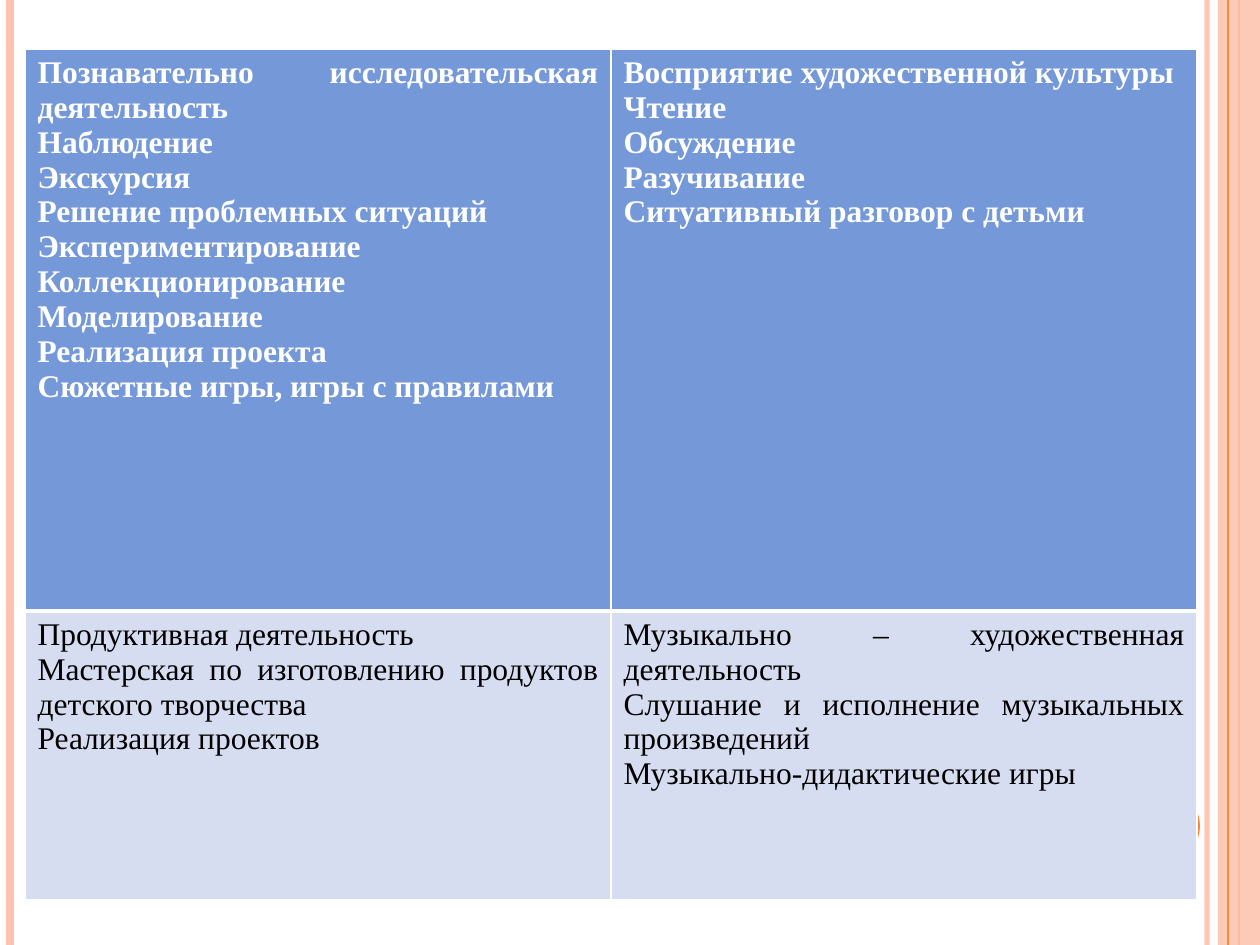
"""Build a slide with a table of children's activities between decorative stripes."""
from dataclasses import dataclass

import pptx
import pptx.dml.color
import pptx.enum.shapes
import pptx.enum.text
import pptx.oxml.ns
import pptx.util
from lxml import etree

PX = 914400 // 126
SLIDE_WIDTH, SLIDE_HEIGHT = 1260, 945
FONT = "Times New Roman"
COLORS = {
    "peach": "FEC3AE",
    "orange": "FE8637",
    "header": "7598D9",
    "body": "D6DDF1",
    "white": "FFFFFF",
    "black": "000000",
}


@dataclass(frozen=True)
class Stripe:
    x: int
    color: str
    weight: float
    opacity: int = 100


@dataclass(frozen=True)
class Block:
    kind: pptx.enum.shapes.MSO_SHAPE
    x: int
    y: int
    width: int
    height: int
    color: str
    opacity: int = 100


@dataclass(frozen=True)
class ActivityRow:
    height: int
    fill: str
    ink: str
    bold: bool
    top: int
    bottom: int
    activities: tuple[tuple[str, ...], ...]


DECOR = (
    Stripe(1207, "peach", 3, 93),
    Stripe(10, "peach", 4.5),
    Stripe(1239, "orange", 1.5),
    Block(pptx.enum.shapes.MSO_SHAPE.RECTANGLE, 1218, 0, 42, SLIDE_HEIGHT, "peach", 87),
    Stripe(1228, "orange", 0.75),
    Block(pptx.enum.shapes.MSO_SHAPE.OVAL, 1124, 788, 76, 76, "orange"),
)

ROWS = (
    ActivityRow(562, "header", "white", True, 1, 3, (
        (
            "Познавательно исследовательская деятельность",
            "Наблюдение",
            "Экскурсия",
            "Решение проблемных ситуаций",
            "Экспериментирование",
            "Коллекционирование",
            "Моделирование",
            "Реализация проекта",
            "Сюжетные игры, игры с правилами",
        ),
        (
            "Восприятие художественной культуры",
            "Чтение",
            "Обсуждение",
            "Разучивание",
            "Ситуативный разговор с детьми",
        ),
    )),
    ActivityRow(289, "body", "black", False, 3, 1, (
        (
            "Продуктивная деятельность",
            "Мастерская по изготовлению продуктов детского творчества",
            "Реализация проектов",
        ),
        (
            "Музыкально – художественная деятельность",
            "Слушание и исполнение музыкальных произведений",
            "Музыкально-дидактические игры",
        ),
    )),
)


def px(length: int) -> pptx.util.Emu:
    """Turn px into EMU."""
    return pptx.util.Emu(length * PX)


def rgb(name: str) -> pptx.dml.color.RGBColor:
    """Look up a named colour."""
    return pptx.dml.color.RGBColor.from_string(COLORS[name])


def add_element(parent, tag: str, **attributes: str):
    """Append a drawing element to its parent."""
    return etree.SubElement(parent, pptx.oxml.ns.qn(tag), attributes)


def set_opacity(properties, opacity: int) -> None:
    """Make the colour in the shape properties translucent."""
    if opacity < 100:
        color = next(properties.iter(pptx.oxml.ns.qn("a:srgbClr")))
        add_element(color, "a:alpha", val=str(opacity * 1000))


def draw_stripe(slide, stripe: Stripe) -> None:
    """Draw a full-height vertical line."""
    line = slide.shapes.add_connector(
        pptx.enum.shapes.MSO_CONNECTOR.STRAIGHT,
        px(stripe.x), px(0), px(stripe.x), px(SLIDE_HEIGHT),
    )
    line.line.color.rgb = rgb(stripe.color)
    line.line.width = pptx.util.Pt(stripe.weight)
    properties = line._element.spPr
    set_opacity(properties, stripe.opacity)
    add_element(properties, "a:effectLst")


def draw_block(slide, block: Block) -> None:
    """Draw a filled shape without an outline."""
    shape = slide.shapes.add_shape(
        block.kind, px(block.x), px(block.y), px(block.width), px(block.height)
    )
    shape.shadow.inherit = False
    shape.fill.solid()
    shape.fill.fore_color.rgb = rgb(block.color)
    shape.line.fill.background()
    set_opacity(shape._element.spPr, block.opacity)


def draw_cell(cell, row: ActivityRow, activities: tuple[str, ...]) -> None:
    """Fill a table cell with its activities, borders and colour."""
    properties = cell._tc.get_or_add_tcPr()
    for side, weight in (("L", 1), ("R", 1), ("T", row.top), ("B", row.bottom)):
        border = add_element(properties, f"a:ln{side}", w=str(pptx.util.Pt(weight)))
        fill = add_element(border, "a:solidFill")
        add_element(fill, "a:srgbClr", val=COLORS["white"])
    cell.fill.solid()
    cell.fill.fore_color.rgb = rgb(row.fill)
    frame = cell.text_frame
    for index, activity in enumerate(activities):
        paragraph = frame.add_paragraph() if index else frame.paragraphs[0]
        paragraph.alignment = pptx.enum.text.PP_ALIGN.JUSTIFY
        run = paragraph.add_run()
        run.text = activity
        run.font.name = FONT
        run.font.size = pptx.util.Pt(18)
        run.font.bold = row.bold
        run.font.color.rgb = rgb(row.ink)


def draw_table(slide, x: int, y: int, column_width: int) -> None:
    """Draw the table of activities."""
    columns = len(ROWS[0].activities)
    height = sum(row.height for row in ROWS)
    table = slide.shapes.add_table(
        len(ROWS), columns, px(x), px(y), px(column_width * columns), px(height)
    ).table
    for row_index, row in enumerate(ROWS):
        table.rows[row_index].height = px(row.height)
        for column, activities in enumerate(row.activities):
            draw_cell(table.cell(row_index, column), row, activities)


def main() -> None:
    """Build and save the slide."""
    deck = pptx.Presentation()
    deck.slide_width, deck.slide_height = px(SLIDE_WIDTH), px(SLIDE_HEIGHT)
    slide = deck.slides.add_slide(deck.slide_layouts[6])
    for item in DECOR:
        if isinstance(item, Stripe):
            draw_stripe(slide, item)
        else:
            draw_block(slide, item)
    draw_table(slide, x=25, y=49, column_width=586)
    deck.save("out.pptx")


if __name__ == "__main__":
    main()
